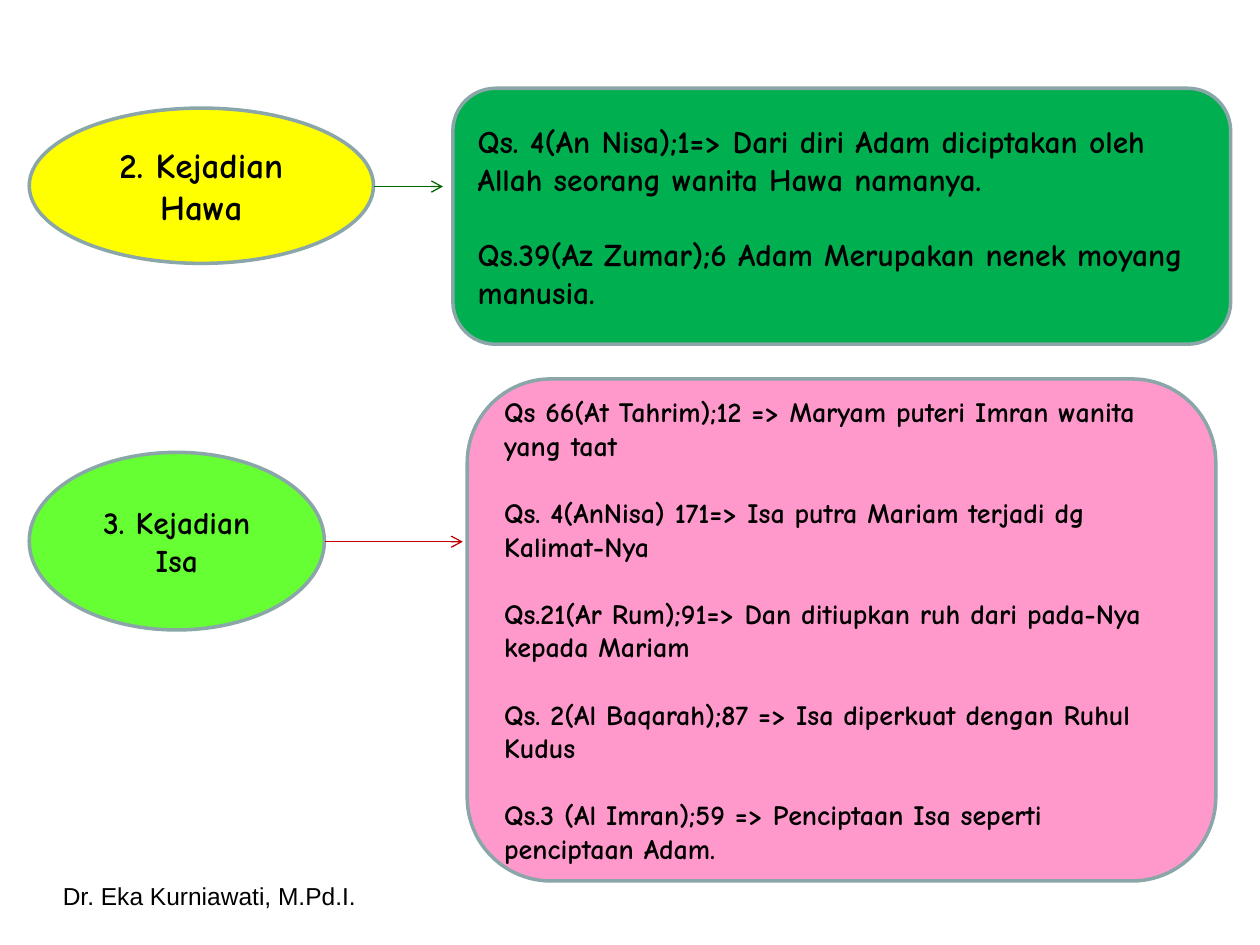
import pptx
import pptx.util
import pptx.dml.color
import pptx.enum.shapes
import pptx.enum.text
import pptx.oxml.ns
import lxml.etree

Cm = pptx.util.Cm
Pt = pptx.util.Pt
RGBColor = pptx.dml.color.RGBColor
Shape = pptx.enum.shapes.MSO_SHAPE
Align = pptx.enum.text.PP_ALIGN
Anchor = pptx.enum.text.MSO_ANCHOR

BLACK = RGBColor(0x00, 0x00, 0x00)
YELLOW = RGBColor(0xFF, 0xFF, 0x00)
GREEN = RGBColor(0x00, 0xB0, 0x50)
LIME = RGBColor(0x66, 0xFF, 0x33)
PINK = RGBColor(0xFF, 0x99, 0xCC)
GREY = RGBColor(0x8A, 0xA6, 0xA8)
FOREST = RGBColor(0x00, 0x66, 0x00)
RED = RGBColor(0xC0, 0x00, 0x00)

HAWA = [
    "Qs. 4(An Nisa);1=> Dari diri Adam diciptakan oleh Allah seorang wanita Hawa namanya.",
    "Qs.39(Az Zumar);6 Adam Merupakan nenek moyang manusia.",
]
ISA = [
    "Qs 66(At Tahrim);12 => Maryam puteri Imran wanita yang taat",
    "Qs. 4(AnNisa) 171=> Isa putra Mariam terjadi dg Kalimat-Nya",
    "Qs.21(Ar Rum);91=> Dan ditiupkan ruh dari pada-Nya kepada Mariam",
    "Qs. 2(Al Baqarah);87 => Isa diperkuat dengan Ruhul Kudus",
    "Qs.3 (Al Imran);59 => Penciptaan Isa seperti penciptaan Adam.",
]


def write(frame, lines, size, align, face="Comic Neue", bold=True, gap=0):
    frame.word_wrap = True
    for i, line in enumerate(lines):
        para = frame.paragraphs[0] if i == 0 else frame.add_paragraph()
        para.text = line
        para.alignment = align
        if i:
            para.space_before = Pt(gap)
        para.font.name = face
        para.font.size = Pt(size)
        para.font.bold = bold
        para.font.color.rgb = BLACK


def add_box(slide, kind, box, fill, lines, size, align):
    shape = slide.shapes.add_shape(kind, *map(Cm, box))
    shape.shadow.inherit = False
    shape.fill.solid()
    shape.fill.fore_color.rgb = fill
    shape.line.color.rgb = GREY
    shape.line.width = Pt(2)
    shape.text_frame.vertical_anchor = Anchor.MIDDLE
    write(shape.text_frame, lines, size, align, gap=size * 1.2)


def add_arrow(slide, left, right, y, color):
    line = slide.shapes.add_connector(
        pptx.enum.shapes.MSO_CONNECTOR.STRAIGHT, Cm(left), Cm(y), Cm(right), Cm(y))
    line.line.color.rgb = color
    line.line.width = Pt(0.75)
    qn = pptx.oxml.ns.qn
    lxml.etree.SubElement(line.line._get_or_add_ln(), qn("a:tailEnd"), type="arrow")
    lxml.etree.SubElement(line._element.spPr, qn("a:effectLst"))


def add_name(slide, text):
    box = slide.shapes.add_textbox(Cm(0.2), Cm(17.63), Cm(8.05), Cm(1.32))
    write(box.text_frame, [text], 14, Align.CENTER, "Arial", False)


def main():
    deck = pptx.Presentation()
    deck.slide_width = Cm(25.4)
    deck.slide_height = Cm(19.05)
    slide = deck.slides.add_slide(deck.slide_layouts[6])
    add_box(slide, Shape.OVAL, (0.59, 2.18, 6.94, 3.13), YELLOW,
            ["2. Kejadian Hawa"], 20, Align.CENTER)
    add_box(slide, Shape.ROUNDED_RECTANGLE, (9.13, 1.78, 15.68, 5.16), GREEN,
            HAWA, 18, Align.LEFT)
    add_box(slide, Shape.OVAL, (0.59, 9.12, 5.95, 3.58), LIME,
            ["3. Kejadian Isa"], 18, Align.CENTER)
    add_box(slide, Shape.ROUNDED_RECTANGLE, (9.42, 7.64, 15.09, 10.12), PINK,
            ISA, 16, Align.LEFT)
    add_arrow(slide, 7.54, 8.93, 3.76, FOREST)
    add_arrow(slide, 6.55, 9.33, 10.92, RED)
    add_name(slide, "Dr. Eka Kurniawati, M.Pd.I.")
    deck.save("out.pptx")


if __name__ == "__main__":
    main()
